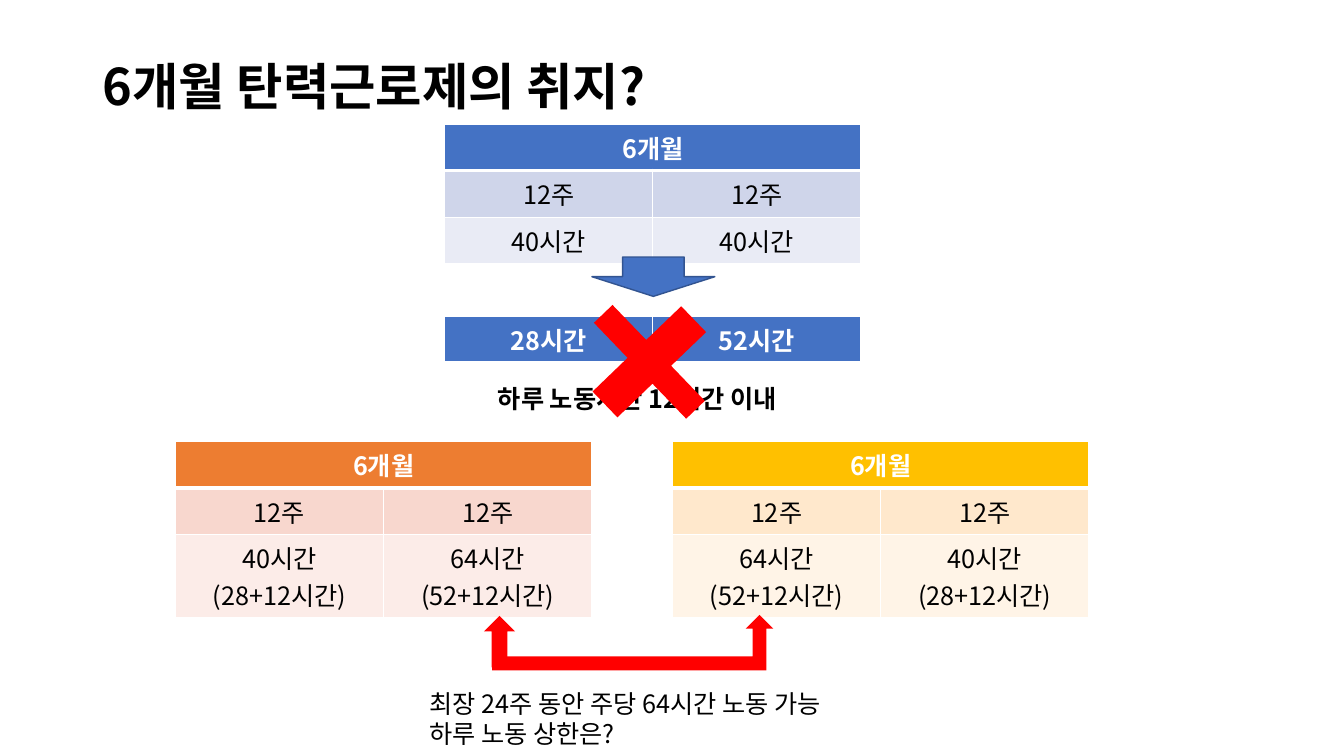
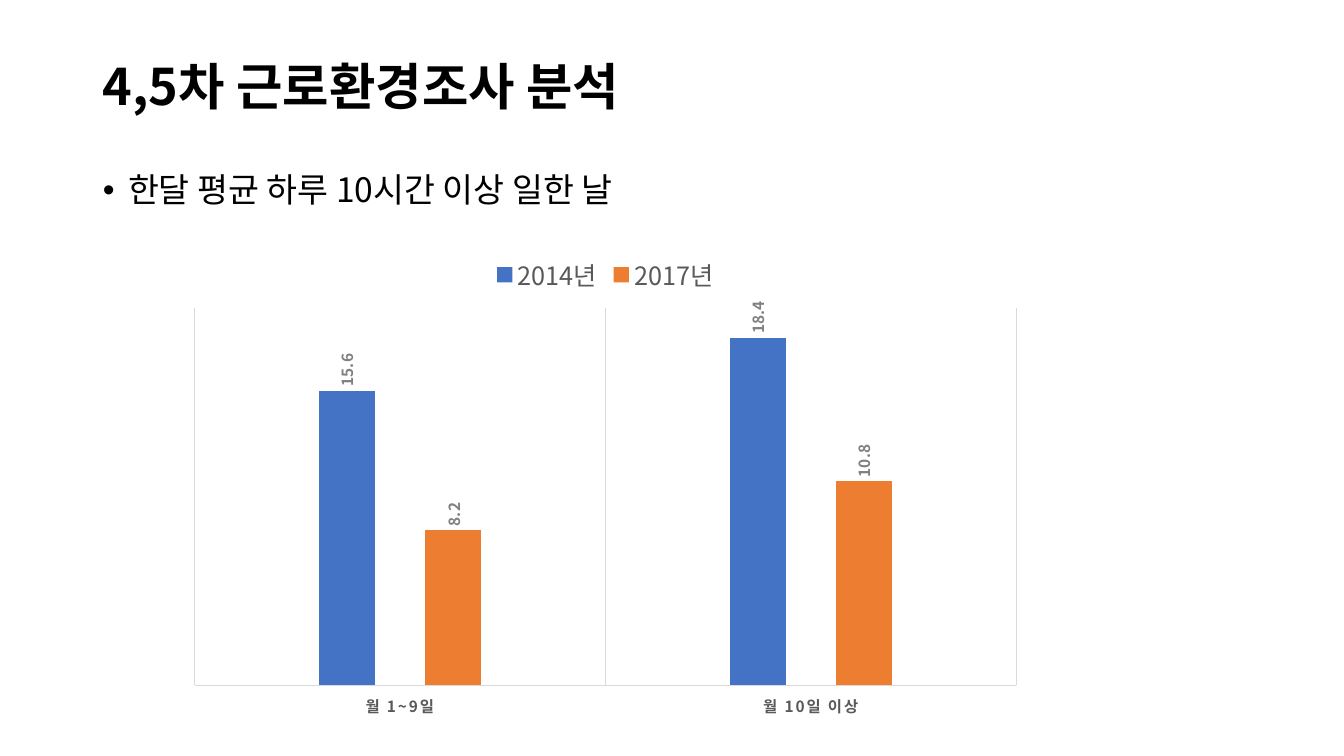
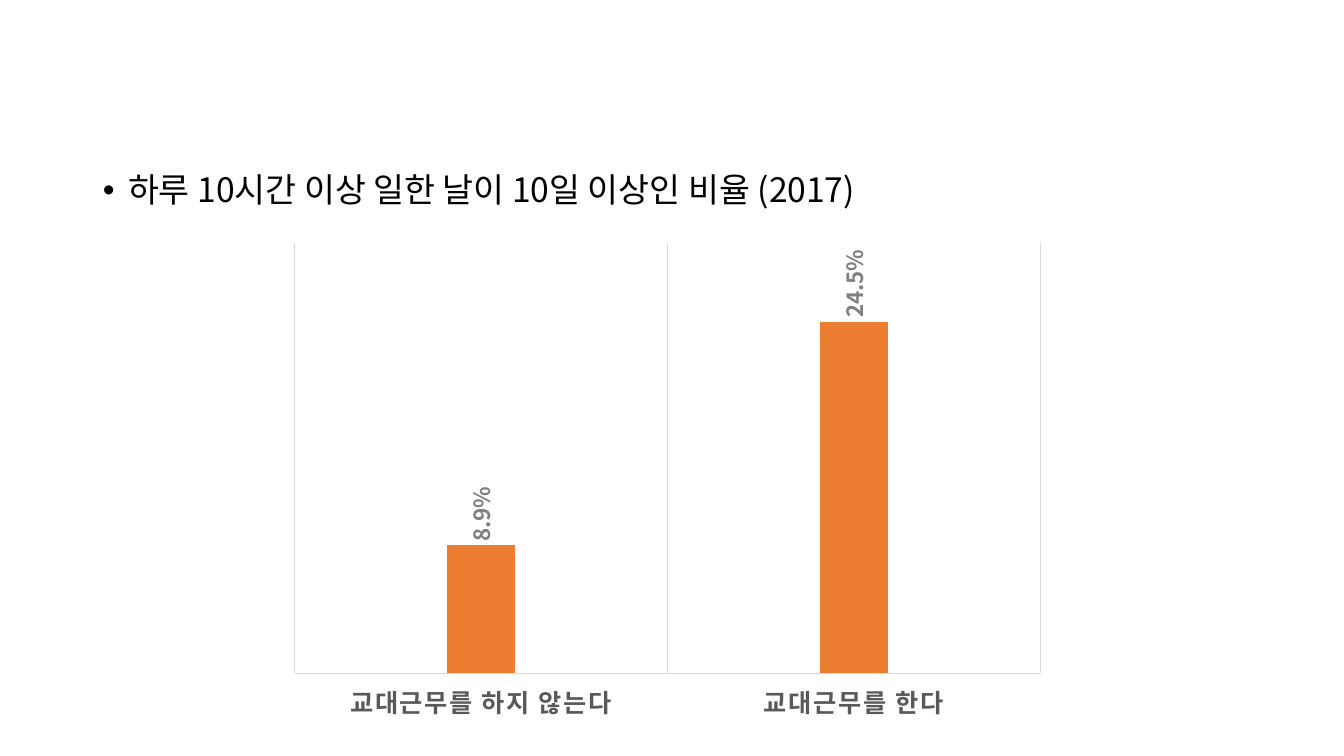
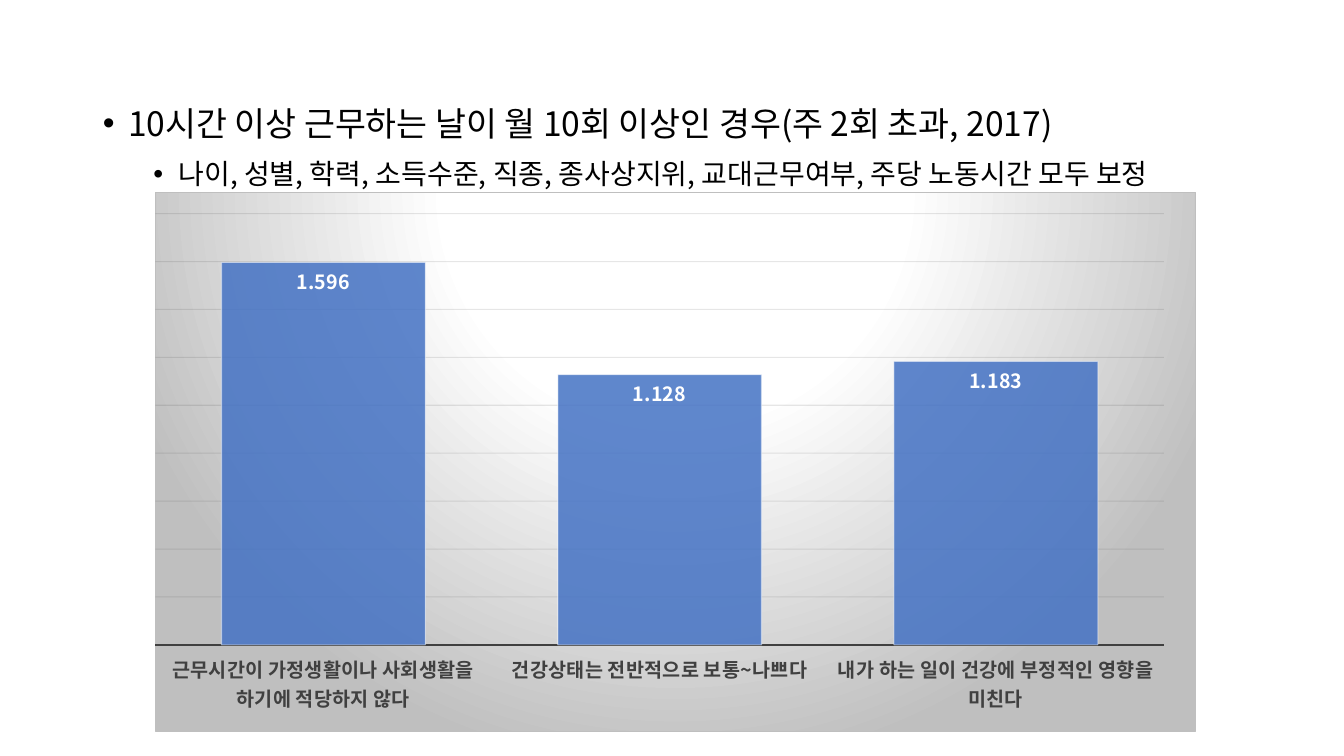
from lxml.etree import SubElement
from pptx import Presentation
from pptx.chart.data import CategoryChartData
from pptx.dml.color import RGBColor
from pptx.enum.chart import XL_CHART_TYPE as ChartType
from pptx.enum.chart import XL_LABEL_POSITION as LabelPosition
from pptx.enum.chart import XL_LEGEND_POSITION as LegendPosition
from pptx.enum.chart import XL_TICK_LABEL_POSITION as TickLabelPosition
from pptx.enum.chart import XL_TICK_MARK as TickMark
from pptx.enum.shapes import MSO_SHAPE as Shape
from pptx.enum.text import MSO_ANCHOR as Anchor
from pptx.enum.text import MSO_AUTO_SIZE as AutoSize
from pptx.enum.text import PP_ALIGN as Align
from pptx.oxml import parse_xml
from pptx.oxml.ns import nsdecls, qn
from pptx.util import Inches, Pt

FONT = "Noto Sans CJK KR"
BLACK = RGBColor(0x00, 0x00, 0x00)
WHITE = RGBColor(0xFF, 0xFF, 0xFF)
BLUE = RGBColor(0x44, 0x72, 0xC4)
DARK_BLUE = RGBColor(0x32, 0x54, 0x91)
ORANGE = RGBColor(0xED, 0x7D, 0x31)
GOLD = RGBColor(0xFF, 0xC0, 0x00)
RED = RGBColor(0xFF, 0x00, 0x00)
AXIS_TEXT = RGBColor(0x59, 0x59, 0x59)
LABEL_GRAY = RGBColor(0x80, 0x80, 0x80)
RULE_GRAY = RGBColor(0xD9, 0xD9, 0xD9)
DARK_GRAY = RGBColor(0x40, 0x40, 0x40)
GRID_BLACK = RGBColor(0x0D, 0x0D, 0x0D)
BLUE_ROWS = (BLUE, RGBColor(0xCF, 0xD5, 0xEA), RGBColor(0xE9, 0xEB, 0xF5))
ORANGE_ROWS = (ORANGE, RGBColor(0xF8, 0xD7, 0xCE), RGBColor(0xFC, 0xEC, 0xE8))
GOLD_ROWS = (GOLD, RGBColor(0xFF, 0xE8, 0xCC), RGBColor(0xFF, 0xF4, 0xE7))

TITLE_BOX = (0.92, 0.4, 11.5, 0.98)
BODY_BOX = (0.92, 1.55, 11.5, 5.2)
ROW_HEIGHT = 0.4

CHART_BACKDROP = f"""<c:spPr {nsdecls('c', 'a')}>
<a:gradFill><a:gsLst>
<a:gs pos="0"><a:srgbClr val="FFFFFF"/></a:gs>
<a:gs pos="39000"><a:srgbClr val="FFFFFF"/></a:gs>
<a:gs pos="100000"><a:srgbClr val="BFBFBF"/></a:gs>
</a:gsLst><a:path path="circle">
<a:fillToRect l="50000" t="-80000" r="50000" b="180000"/>
</a:path></a:gradFill>
<a:ln w="9525"><a:solidFill><a:srgbClr val="BFBFBF"/></a:solidFill></a:ln>
</c:spPr>"""


def inches(box):
    return [Inches(length) for length in box]


def place(item, box):
    item.left, item.top, item.width, item.height = inches(box)


def style_font(font, size, color, bold=False):
    font.name = FONT
    font.size = Pt(size)
    font.bold = bold
    font.color.rgb = color
    SubElement(font._element, qn("a:ea"), typeface=FONT)


def write(para, text, size=18, color=BLACK, bold=False):
    span = para.add_run()
    span.text = text
    style_font(span.font, size, color, bold)


def add_title(slide, text):
    title = slide.shapes.title
    place(title, TITLE_BOX)
    frame = title.text_frame
    frame.auto_size = AutoSize.NONE
    frame.vertical_anchor = Anchor.MIDDLE
    para = frame.paragraphs[0]
    para.alignment = Align.LEFT
    para.line_spacing = 0.9
    write(para, text, 36, bold=True)


def add_bullets(slide, box, items):
    body = slide.placeholders[1]
    place(body, box)
    frame = body.text_frame
    frame.auto_size = AutoSize.NONE
    for index, text in enumerate(items):
        para = frame.add_paragraph() if index else frame.paragraphs[0]
        para.level = index
        para.line_spacing = 1.2
        para.space_before = Pt((10, 5)[index])
        props = para._p.get_or_add_pPr()
        props.set("marL", str(Inches(0.25 + 0.5 * index)))
        props.set("indent", str(Inches(-0.25)))
        SubElement(props, qn("a:buChar"), char="•")
        write(para, text, (24, 20)[index])


def add_note(slide, box, lines, bold=False):
    frame = slide.shapes.add_textbox(*inches(box)).text_frame
    frame.word_wrap = False
    for index, text in enumerate(lines):
        para = frame.add_paragraph() if index else frame.paragraphs[0]
        write(para, text, bold=bold)


def add_mark(slide, preset, box, color, outline=None):
    mark = slide.shapes.add_shape(preset, *inches(box))
    mark.shadow.inherit = False
    mark.fill.solid()
    mark.fill.fore_color.rgb = color
    if outline is None:
        mark.line.fill.background()
    else:
        mark.line.color.rgb = outline
        mark.line.width = Pt(1)
    return mark


def format_cell(cell, fill, header):
    cell.fill.solid()
    cell.fill.fore_color.rgb = fill
    props = cell._tc.get_or_add_tcPr()
    for index, side in enumerate(("lnL", "lnR", "lnT", "lnB")):
        width = Pt(3 if header and side == "lnB" else 1)
        props.insert(index, parse_xml(
            f'<a:{side} {nsdecls("a")} w="{width}"><a:solidFill>'
            f'<a:srgbClr val="{WHITE}"/></a:solidFill></a:{side}>'))


def add_hours_table(slide, left, top, rows, fills):
    box = (left, top, 4.13, ROW_HEIGHT * len(rows))
    table = slide.shapes.add_table(len(rows), 2, *inches(box)).table
    table.first_row = table.horz_banding = False
    for row, (texts, fill) in enumerate(zip(rows, fills)):
        header = row == 0
        table.rows[row].height = Inches(ROW_HEIGHT)
        if len(texts) == 1:
            table.cell(row, 0).merge(table.cell(row, 1))
        for column in range(2):
            format_cell(table.cell(row, column), fill, header)
        for column, text in enumerate(texts):
            frame = table.cell(row, column).text_frame
            for index, line in enumerate(text.split("\n")):
                para = frame.add_paragraph() if index else frame.paragraphs[0]
                para.alignment = Align.CENTER
                write(para, line, color=WHITE if header else BLACK, bold=header)


def add_columns(slide, box, categories, series, colors, top_value, gap, overlap,
                axis_style, label_style, label_position, number_format):
    data = CategoryChartData()
    data.categories = categories
    for name, values in series:
        data.add_series(name, values)
    chart = slide.shapes.add_chart(
        ChartType.COLUMN_CLUSTERED, *inches(box), data).chart
    style_font(chart.font, 10, BLACK)
    chart.has_title = False
    chart.has_legend = False
    plot = chart.plots[0]
    plot.gap_width, plot.overlap = gap, overlap
    plot.vary_by_categories = False

    values_axis = chart.value_axis
    values_axis.minimum_scale, values_axis.maximum_scale = 0, top_value
    values_axis.has_major_gridlines = False
    values_axis.visible = False
    names_axis = chart.category_axis
    names_axis.major_tick_mark = names_axis.minor_tick_mark = TickMark.NONE
    names_axis.tick_label_position = TickLabelPosition.LOW
    style_font(names_axis.tick_labels.font, *axis_style, bold=True)

    for columns, color in zip(plot.series, colors):
        columns.format.fill.solid()
        columns.format.fill.fore_color.rgb = color
        labels = columns.data_labels
        labels.show_value = True
        labels.position = label_position
        labels.number_format = number_format
        labels.number_format_is_linked = False
        style_font(labels.font, *label_style, bold=True)
    return chart


def add_ruled_columns(slide, box, categories, series, colors, top_value,
                      axis_size, label_size, number_format):
    chart = add_columns(slide, box, categories, series, colors, top_value, 444, -90,
                        (axis_size, AXIS_TEXT), (label_size, LABEL_GRAY),
                        LabelPosition.OUTSIDE_END, number_format)
    axis = chart.category_axis
    axis.has_major_gridlines = True
    for line in (axis.format.line, axis.major_gridlines.format.line):
        line.color.rgb = RULE_GRAY
        line.width = Pt(0.75)
    axis.tick_labels.font._element.set("spc", "120")
    for columns in chart.plots[0].series:
        labels = columns.data_labels._element
        text_body = labels.find(".//" + qn("a:bodyPr"))
        text_body.set("rot", "-5400000")
        text_body.set("vert", "horz")
    return chart


def set_alphas(element, *percents):
    for color, percent in zip(element.iter(qn("a:srgbClr")), percents):
        SubElement(color, qn("a:alpha"), val=str(percent * 1000))


def set_plot_layout(chart, **fractions):
    plot_area = chart._chartSpace.find(".//" + qn("c:plotArea"))
    for old in plot_area.findall(qn("c:layout")):
        plot_area.remove(old)
    settings = {"layoutTarget": "inner", "xMode": "edge", "yMode": "edge", **fractions}
    entries = "".join(f'<c:{key} val="{value}"/>' for key, value in settings.items())
    plot_area.insert(0, parse_xml(
        f'<c:layout {nsdecls("c")}><c:manualLayout>{entries}</c:manualLayout></c:layout>'))


def add_backdrop_columns(slide, box, categories, values):
    chart = add_columns(slide, box, categories, [("Series 1", values)], [BLUE], 1.8, 65, 0,
                        (14, DARK_GRAY), (14, WHITE),
                        LabelPosition.INSIDE_END, "###0.000")
    axis_line = chart.category_axis.format.line
    axis_line.color.rgb = DARK_GRAY
    axis_line.width = Pt(1.5)
    axis = chart.value_axis
    axis.major_unit = 0.2
    axis.has_major_gridlines = True
    grid = axis.major_gridlines.format.line
    grid.color.rgb = GRID_BLACK
    grid.width = Pt(0.75)
    set_alphas(axis._element.find(qn("c:majorGridlines")), 10)
    columns = chart.plots[0].series[0]
    columns.format.line.color.rgb = WHITE
    columns.format.line.width = Pt(0.75)
    set_alphas(columns._element.find(qn("c:spPr")), 85, 50)
    set_plot_layout(chart, x=0, y=0.04, w=0.97, h=0.8)
    chart._chartSpace.find(qn("c:chart")).addnext(parse_xml(CHART_BACKDROP))


def content_slide(deck, title, box, bullets):
    slide = deck.slides.add_slide(deck.slide_layouts[1])
    if title:
        add_title(slide, title)
    else:
        heading = slide.shapes.title._element
        heading.getparent().remove(heading)
    add_bullets(slide, box, bullets)
    return slide


def purpose_slide(deck):
    slide = deck.slides.add_slide(deck.slide_layouts[5])
    add_title(slide, "6개월 탄력근로제의 취지?")
    heads = [["6개월"], ["12주", "12주"]]
    short, long = "40시간\n(28+12시간)", "64시간\n(52+12시간)"
    add_hours_table(slide, 4.41, 1.23, heads + [["40시간", "40시간"]], BLUE_ROWS)
    add_hours_table(slide, 1.74, 4.38, heads + [[short, long]], ORANGE_ROWS)
    add_hours_table(slide, 6.67, 4.38, heads + [[long, short]], GOLD_ROWS)
    add_mark(slide, Shape.DOWN_ARROW, (5.87, 2.55, 1.22, 0.39), BLUE, DARK_BLUE)
    add_hours_table(slide, 4.41, 3.14, [["28시간", "52시간"]], BLUE_ROWS)
    add_note(slide, (4.84, 3.75, 3.27, 0.4), ["하루 노동시간 12시간 이내"], bold=True)
    cross = add_mark(slide, Shape.CROSS, (5.78, 2.98, 1.32, 1.22), RED)
    cross.adjustments[0] = 0.395
    cross.rotation = 46.1
    add_mark(slide, Shape.BENT_UP_ARROW, (4.88, 6.1, 2.79, 0.55), RED)
    add_mark(slide, Shape.UP_ARROW, (4.8, 6.11, 0.31, 0.51), RED)
    add_note(slide, (4.16, 6.78, 4.57, 0.71),
             ["최장 24주 동안 주당 64시간 노동 가능", "하루 노동 상한은?"])


def survey_slide(deck):
    slide = content_slide(deck, "4,5차 근로환경조사 분석", BODY_BOX,
                          ["한달 평균 하루 10시간 이상 일한 날"])
    chart = add_ruled_columns(
        slide, (1.76, 2.42, 8.49, 4.79), ["월 1~9일", "월 10일 이상"],
        [("2014년", (15.6, 18.4)), ("2017년", (8.2, 10.8))],
        (BLUE, ORANGE), 20, 11, 11, "General")
    chart.has_legend = True
    chart.legend.position = LegendPosition.TOP
    chart.legend.include_in_layout = False
    style_font(chart.legend.font, 18, AXIS_TEXT)


def shift_work_slide(deck):
    slide = content_slide(deck, None, BODY_BOX,
                          ["하루 10시간 이상 일한 날이 10일 이상인 비율 (2017)"])
    add_ruled_columns(
        slide, (2.77, 2.31, 7.7, 4.93), ["교대근무를 하지 않는다", "교대근무를 한다"],
        [("Series 1", (0.089, 0.245))], [ORANGE], 0.3, 18, 16, "###0.0%")


def health_slide(deck):
    slide = content_slide(deck, None, (0.92, 0.89, 11.81, 5.2), [
        "10시간 이상 근무하는 날이 월 10회 이상인 경우(주 2회 초과, 2017)",
        "나이, 성별, 학력, 소득수준, 직종, 종사상지위, 교대근무여부, 주당 노동시간 모두 보정"])
    add_backdrop_columns(
        slide, (1.53, 1.9, 10.33, 5.36),
        ["근무시간이 가정생활이나 사회생활을 하기에 적당하지 않다",
         "건강상태는 전반적으로 보통~나쁘다",
         "내가 하는 일이 건강에 부정적인 영향을 미친다"],
        (1.596, 1.128, 1.183))


def main():
    deck = Presentation()
    deck.slide_width, deck.slide_height = Inches(13.33), Inches(7.5)
    for build in (purpose_slide, survey_slide, shift_work_slide, health_slide):
        build(deck)
    deck.save("out.pptx")


if __name__ == "__main__":
    main()
